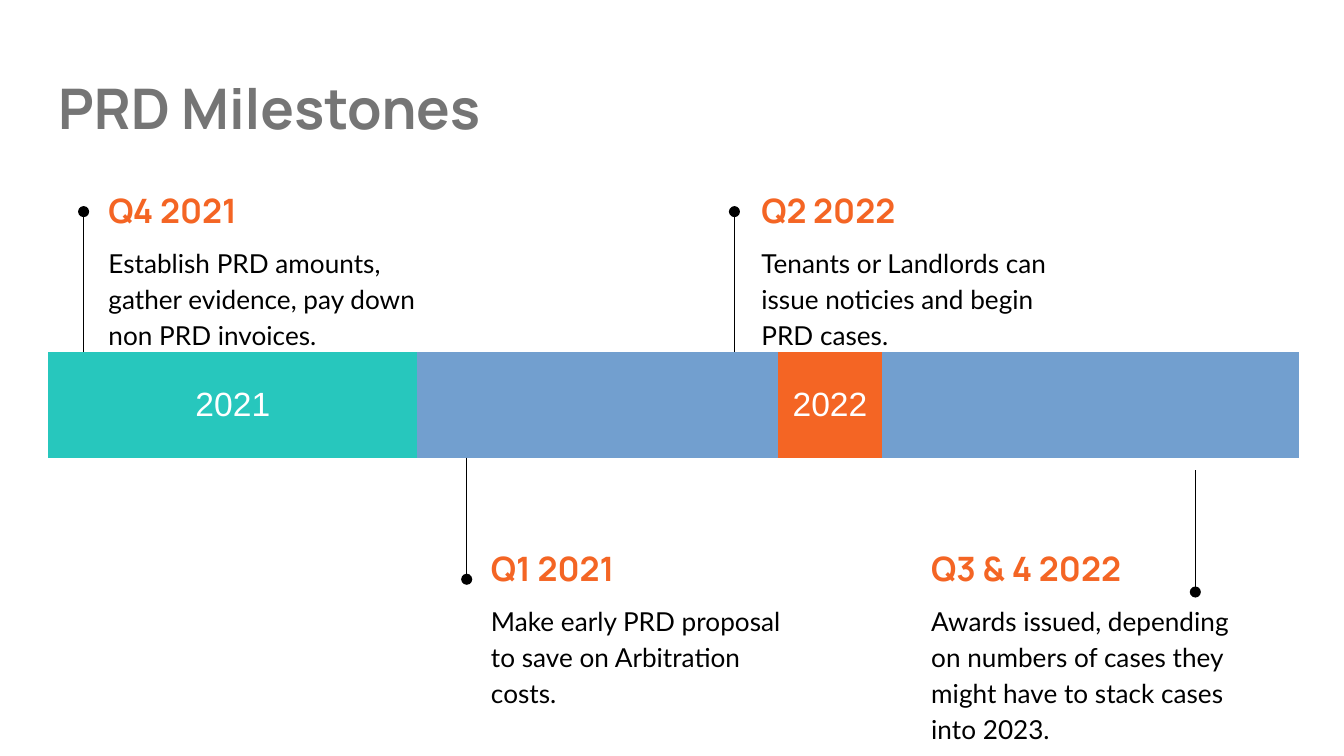
from pptx import Presentation
from pptx.dml.color import RGBColor
from pptx.enum.shapes import MSO_CONNECTOR as CONNECTOR
from pptx.enum.text import MSO_ANCHOR as ANCHOR, PP_ALIGN as ALIGN
from pptx.oxml.ns import qn
from pptx.util import Cm, Pt
from lxml.etree import SubElement

GREY = RGBColor(0x75, 0x75, 0x75)
ORANGE = RGBColor(0xF4, 0x65, 0x24)
TEAL = RGBColor(0x27, 0xC7, 0xBD)
BLACK = RGBColor(0, 0, 0)
WHITE = RGBColor(0xFF, 0xFF, 0xFF)

# Lengths in cm
INSET = 0.25
BAR_LEFT, BAR_TOP, BAR_HEIGHT = 0.91, 6.65, 2
BAR_BOTTOM = BAR_TOP + BAR_HEIGHT
ABOVE, BELOW = 3.43, 10.19
HEADING_HEIGHT, BODY_OFFSET, BODY_HEIGHT = 1.09, 0.91, 1.6

TITLE = "PRD Milestones"
COLUMN_WIDTHS = [1.97] * 3 + [1.07, 2.87] + [1.97] * 7
# label, colour, columns spanned
YEARS = [("2021", TEAL, 4), ("2022", ORANGE, 8)]
# heading, body, text left, text top, text width, stem x, stem start, stem end
MILESTONES = [
    ("Q4 2021", "Establish PRD amounts, gather evidence, pay down non PRD invoices.",
     1.8, ABOVE, 6.43, 1.58, BAR_TOP, 4),
    ("Q1 2021", "Make early PRD proposal to save on Arbitration costs.",
     9.03, BELOW, 6.43, 8.82, BAR_BOTTOM, 10.95),
    ("Q2 2022", "Tenants or Landlords can issue noticies and begin PRD cases.",
     14.14, ABOVE, 6.53, 13.88, BAR_TOP, 4),
    ("Q3 & 4 2022",
     "Awards issued, depending on numbers of cases they might have to stack cases into 2023.",
     17.35, BELOW, 6.53, 22.59, 8.89, 11.19),
]


def write(frame, text, *, size, font, color, bold=False, align=ALIGN.LEFT,
          spacing=1.0):
    paragraph = frame.paragraphs[0]
    paragraph.alignment = align
    paragraph.line_spacing = spacing
    run = paragraph.add_run()
    run.text = text
    run.font.size = Pt(size)
    run.font.name = font
    run.font.bold = bold
    run.font.color.rgb = color


def add_text(slide, text, left, top, width, height, anchor=ANCHOR.TOP, **style):
    box = slide.shapes.add_textbox(Cm(left), Cm(top), Cm(width), Cm(height))
    frame = box.text_frame
    frame.word_wrap = True
    frame.vertical_anchor = anchor
    frame.margin_left = frame.margin_right = Cm(INSET)
    frame.margin_top = frame.margin_bottom = Cm(INSET)
    write(frame, text, **style)


def add_bar(slide):
    table = slide.shapes.add_table(1, len(COLUMN_WIDTHS), Cm(BAR_LEFT), Cm(BAR_TOP),
                                   Cm(sum(COLUMN_WIDTHS)), Cm(BAR_HEIGHT)).table
    table.first_row = table.horz_banding = False
    for column, width in zip(table.columns, COLUMN_WIDTHS):
        column.width = Cm(width)
    first = 0
    for label, color, span in YEARS:
        cell = table.cell(0, first)
        cell.merge(table.cell(0, first + span - 1))
        first += span
        cell.fill.solid()
        cell.fill.fore_color.rgb = color
        cell.vertical_anchor = ANCHOR.MIDDLE
        cell.margin_left = cell.margin_right = Cm(INSET)
        cell.margin_top = cell.margin_bottom = Cm(INSET)
        properties = cell._tc.get_or_add_tcPr()
        for position, side in enumerate(("a:lnL", "a:lnR", "a:lnT", "a:lnB")):
            border = properties.makeelement(qn(side), {"w": "0"})
            SubElement(border, qn("a:noFill"))
            properties.insert(position, border)
        write(cell.text_frame, label, size=18, font="Arial", color=WHITE,
              align=ALIGN.CENTER)


def add_stem(slide, x, start, end):
    """Draw a thin line that ends in a dot."""
    stem = slide.shapes.add_connector(CONNECTOR.STRAIGHT, Cm(x), Cm(start),
                                      Cm(x), Cm(end))
    stem.line.color.rgb = BLACK
    stem.line.width = Pt(0.75)
    SubElement(stem.line._get_or_add_ln(), qn("a:tailEnd"), type="oval")
    SubElement(stem._element.spPr, qn("a:effectLst"))


def main():
    deck = Presentation()
    deck.slide_width, deck.slide_height = Cm(25.4), Cm(14.29)
    slide = deck.slides.add_slide(deck.slide_layouts[6])

    add_text(slide, TITLE, 0.85, 1.14, 23.67, 1.78, size=30, font="Manrope",
             color=GREY, bold=True)
    add_bar(slide)
    for heading, body, left, top, width, x, start, end in MILESTONES:
        add_stem(slide, x, start, end)
        add_text(slide, heading, left, top, width, HEADING_HEIGHT, ANCHOR.MIDDLE,
                 size=18, font="Manrope", color=ORANGE, bold=True)
        add_text(slide, body, left, top + BODY_OFFSET, width, BODY_HEIGHT,
                 size=14, font="Lato", color=BLACK, spacing=1.15)
    deck.save("out.pptx")


if __name__ == "__main__":
    main()
